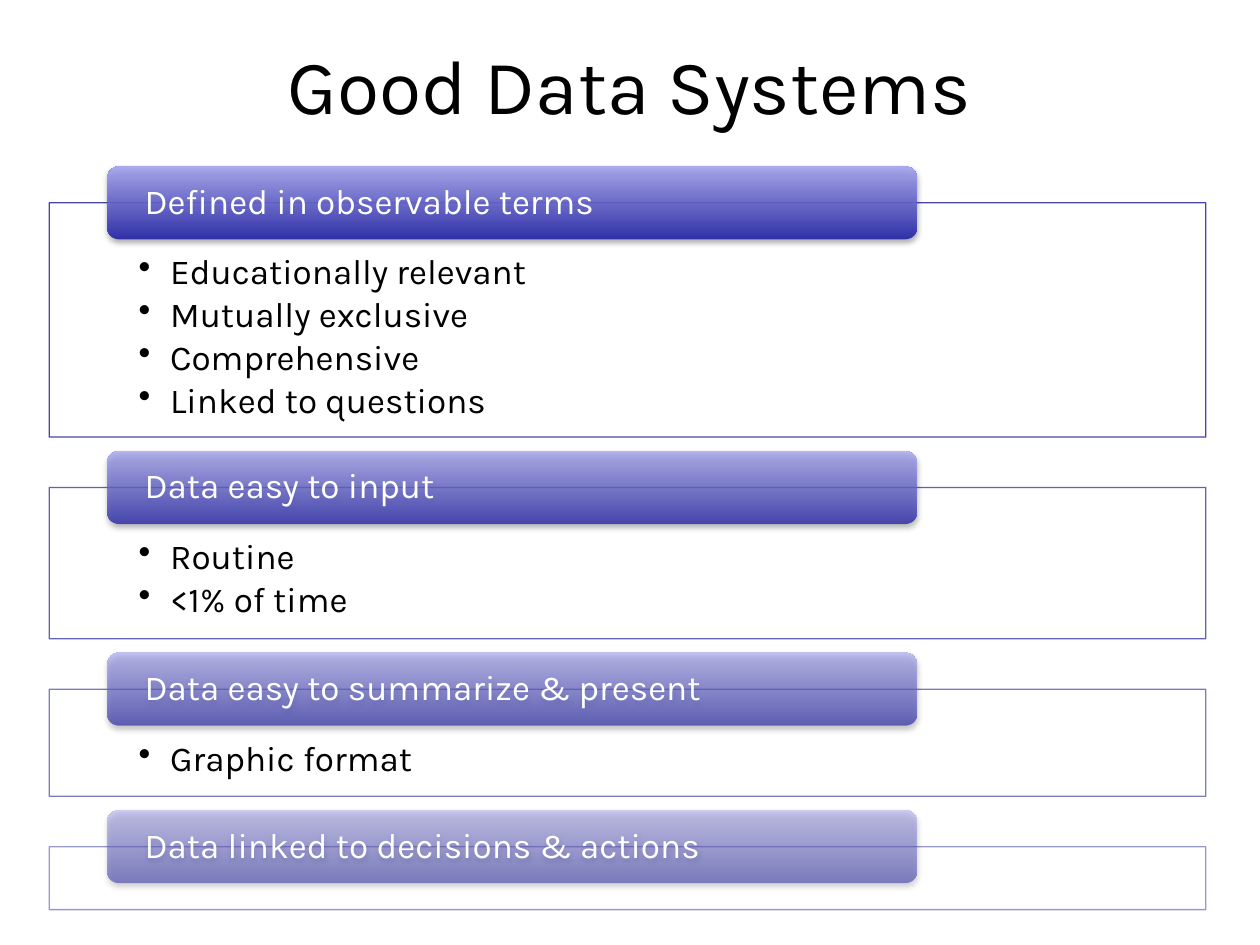
from dataclasses import dataclass

from lxml.etree import SubElement as Sub
from pptx import Presentation
from pptx.dml.color import RGBColor
from pptx.enum.shapes import MSO_SHAPE as Kind
from pptx.enum.text import MSO_ANCHOR as Anchor, PP_ALIGN as Align
from pptx.oxml.ns import qn
from pptx.util import Inches, Pt

WIDE, HIGH = Inches(10), Inches(7.5)
COLS, ROWS = 100, 75
FONT = "Karla"
BLACK = RGBColor(0, 0, 0)
WHITE = RGBColor(255, 255, 255)
EDGE = RGBColor(0x33, 0x33, 0x99)
DARK = RGBColor(0x24, 0x24, 0xA8)
LIGHT = RGBColor(0xA4, 0xA4, 0xEF)
TOP, GAP, RISE = 16.1, 4, 2.9


@dataclass
class Group:
    head: str
    rows: float
    items: tuple = ()


GROUPS = (
    Group("Defined in observable terms", 18.6,
          ("Educationally relevant", "Mutually exclusive",
           "Comprehensive", "Linked to questions")),
    Group("Data easy to input", 12, ("Routine", "<1% of time")),
    Group("Data easy to summarize & present", 8.5, ("Graphic format",)),
    Group("Data linked to decisions & actions", 5),
)


def col(num: float) -> int:
    return round(WIDE * num / COLS)


def row(num: float) -> int:
    return round(HIGH * num / ROWS)


def fade(node, share: float) -> None:
    for tint in node.iter(qn("a:srgbClr")):
        Sub(tint, qn("a:alpha"), val=str(round(share * 1000)))


def put(frame, lines, size=20, color=BLACK, align=Align.LEFT,
        anchor=Anchor.MIDDLE, pads=None, after=None, dots=False) -> None:
    frame.word_wrap = True
    frame.vertical_anchor = anchor
    if pads:
        (frame.margin_left, frame.margin_top,
         frame.margin_right, frame.margin_bottom) = pads
    for num, line in enumerate(lines):
        para = frame.add_paragraph() if num else frame.paragraphs[0]
        para.alignment = align
        props = para._p.get_or_add_pPr()
        if after:
            para.line_spacing = 0.9
            space = Sub(props, qn("a:spcAft"))
            Sub(space, qn("a:spcPct"), val=str(after * 1000))
        if dots:
            para.level = 1
            props.set("marL", str(col(2.5)))
            props.set("indent", str(-col(2.5)))
            Sub(props, qn("a:buChar"), char="•")
        run = para.add_run()
        run.text = line
        run.font.name = FONT
        run.font.size = Pt(size)
        run.font.color.rgb = color


def add_panel(slide, group: Group, top: float, share: float) -> None:
    box = slide.shapes.add_shape(
        Kind.RECTANGLE, col(3.9), row(top), col(91.8), row(group.rows))
    box.shadow.inherit = False
    box.fill.solid()
    box.fill.fore_color.rgb = WHITE
    box.line.color.rgb = EDGE
    box.line.width = Pt(0.75)
    props = box._element.spPr
    fade(props.find(qn("a:solidFill")), 90)
    fade(props.find(qn("a:ln")), share)
    if group.items:
        put(box.text_frame, group.items, anchor=Anchor.TOP, after=15, dots=True,
            pads=(col(7.1), row(4.1), col(7.1), row(1.6)))


def add_tab(slide, group: Group, top: float, share: float) -> None:
    tab = slide.shapes.add_shape(
        Kind.ROUNDED_RECTANGLE, col(8.5), row(top), col(64.3), row(2 * RISE))
    tab.line.fill.background()
    tab.fill.gradient()
    tab.fill.gradient_angle = 90
    for stop, color in zip(tab.fill.gradient_stops, (DARK, LIGHT)):
        stop.color.rgb = color
    props = tab._element.spPr
    fade(props, share)
    tab.shadow.inherit = False
    shade = Sub(props.find(qn("a:effectLst")), qn("a:outerShdw"),
                blurRad=str(Pt(3.1)), dist=str(Pt(1.8)),
                dir="5400000", rotWithShape="0")
    Sub(shade, qn("a:srgbClr"), val=str(BLACK))
    fade(shade, 35)
    put(tab.text_frame, (group.head,), color=WHITE, after=35,
        pads=(col(2.7), 0, col(2.7), 0))


def main() -> None:
    deck = Presentation()
    deck.slide_width, deck.slide_height = WIDE, HIGH
    slide = deck.slides.add_slide(deck.slide_layouts[5])
    title = slide.shapes.title
    title.left, title.top = col(7.5), row(0.4)
    title.width, title.height = col(85), row(12.5)
    put(title.text_frame, ("Good Data Systems",), size=44, align=Align.CENTER)
    top = TOP
    for num, group in enumerate(GROUPS):
        share = 90 - 40 * num / (len(GROUPS) - 1)
        add_panel(slide, group, top, share)
        add_tab(slide, group, top - RISE, share)
        top += group.rows + GAP
    deck.save("out.pptx")


if __name__ == "__main__":
    main()
